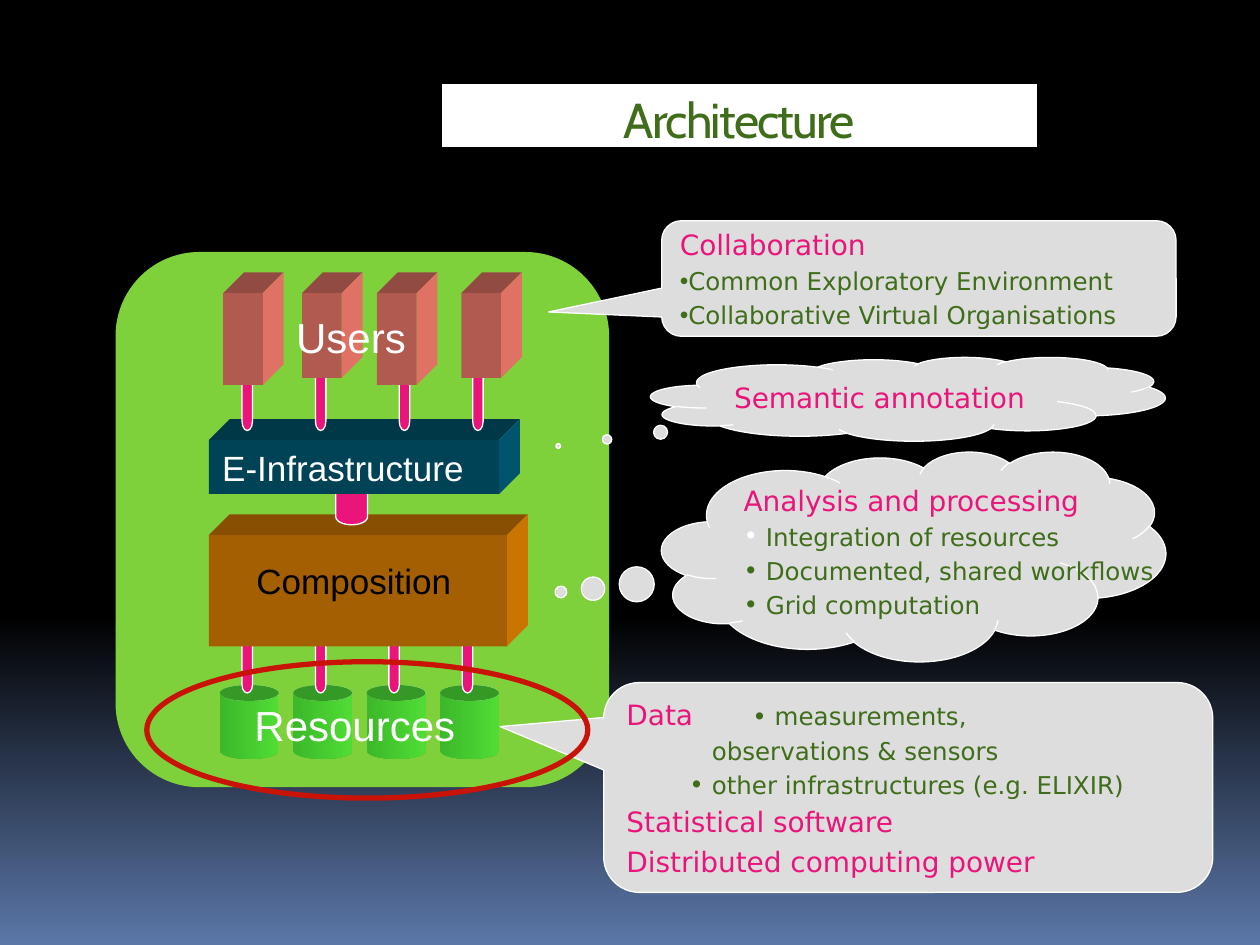
import pptx
import pptx.util
import pptx.dml.color
import pptx.enum.shapes
import pptx.enum.text
import pptx.oxml.ns
from lxml import etree

Cm = pptx.util.Cm
Pt = pptx.util.Pt
KIND = pptx.enum.shapes.MSO_SHAPE
ANCHOR = pptx.enum.text.MSO_ANCHOR
ALIGN = pptx.enum.text.PP_ALIGN
SANS = "DejaVu Sans"
INK = {
    "black": "000000", "white": "FFFFFF", "dusk": "5B77A8",
    "panel": "7FD13B", "pink": "EA157A", "grey": "DDDDDD",
    "text": "3F6D19", "ring": "CA1307",
    "lid": "359A25", "leaf": "3CB82A", "lime": "50DC35",
}
USER = ("B15B50", "924B42", "DF7265")
INFRA = ("004357", "003848", "00546D")
COMP = ("A45F02", "884F02", "CA7502")


def rgb(name):
    """Return the colour for a palette name or a hex string."""
    return pptx.dml.color.RGBColor.from_string(INK.get(name, name))


def paint(shape, fill, line=None, width=0.75):
    """Set the fill and outline of a shape."""
    shape.shadow.inherit = False
    if fill:
        shape.fill.solid()
        shape.fill.fore_color.rgb = rgb(fill)
    else:
        shape.fill.background()
    if line:
        shape.line.color.rgb = rgb(line)
        shape.line.width = Pt(width)
    else:
        shape.line.fill.background()


def draw(slide, kind, box, fill, line=None, width=0.75, adj=()):
    """Add a preset shape at a box given in centimetres."""
    shape = slide.shapes.add_shape(kind, *map(Cm, box))
    for i, value in enumerate(adj):
        shape.adjustments[i] = value
    paint(shape, fill, line, width)
    return shape


def style(run, size, face, color):
    """Set the size, face and colour of a run."""
    run.font.size = Pt(size)
    run.font.name = face
    run.font.color.rgb = rgb(color)


def label(slide, box, text, size, color):
    """Add a single line of text."""
    frame = slide.shapes.add_textbox(*map(Cm, box)).text_frame
    frame.word_wrap = False
    frame.text = text
    style(frame.paragraphs[0].runs[0], size, "Arial", color)


def face(slide, points, fill):
    """Add one flat face of a block."""
    pts = [(Cm(x), Cm(y)) for x, y in points]
    form = slide.shapes.build_freeform(*pts[0], scale=1.0)
    form.add_line_segments(pts[1:], close=True)
    paint(form.convert_to_shape(), fill)


def block(slide, box, tones, deep=0.42):
    """Add a solid block whose box is its front face."""
    x, y, w, h = box
    r, b = x + w, y + h
    front, top, side = tones
    face(slide, [(x, y), (x + deep, y - deep), (r + deep, y - deep), (r, y)], top)
    face(slide, [(r, y), (r + deep, y - deep), (r + deep, b - deep), (r, b)], side)
    draw(slide, KIND.RECTANGLE, box, front)


def pin(slide, x, y, h, w=0.21, adj=1.5):
    """Add a pink connecting rod."""
    draw(slide, KIND.CAN, (x, y, w, h), "pink", "white", adj=[adj])


def drum(slide, x, y, w=1.19, h=1.49, lid=0.32):
    """Add a shaded cylinder with a dark lid."""
    can = draw(slide, KIND.CAN, (x, y, w, h), "leaf", adj=[lid / w])
    can.fill.gradient()
    can.fill.gradient_angle = 0
    for stop, tone in zip(can.fill.gradient_stops, ("leaf", "lime")):
        stop.color.rgb = rgb(tone)
    draw(slide, KIND.OVAL, (x, y, w, lid), "lid")


def bullet(para, gap, font, color, left=0):
    """Give a paragraph a round bullet with a hanging indent."""
    props = para._p.get_or_add_pPr()
    props.set("marL", str(Cm(left + gap)))
    props.set("indent", str(-Cm(gap)))
    qn = pptx.oxml.ns.qn
    tint = etree.SubElement(props, qn("a:buClr"))
    etree.SubElement(tint, qn("a:srgbClr")).set("val", INK[color])
    etree.SubElement(props, qn("a:buFont")).set("typeface", font)
    etree.SubElement(props, qn("a:buChar")).set("char", "•")


def note(slide, kind, box, adj, lines):
    """Add a grey callout and return its paragraphs."""
    shape = draw(slide, kind, box, "grey", "white", adj=adj)
    frame = shape.text_frame
    frame.word_wrap = False
    frame.vertical_anchor = ANCHOR.MIDDLE
    frame.text = "\n".join(text for text, size in lines)
    for i, (para, (text, size)) in enumerate(zip(frame.paragraphs, lines)):
        para.alignment = ALIGN.LEFT
        if i:
            para.space_before = Pt(round(size * 0.2, 1))
        style(para.runs[0], size, SANS, "pink" if size == 16 else "text")
    return frame.paragraphs


def notes(slide):
    """Add the four callouts."""
    wedge, cloud = KIND.ROUNDED_RECTANGULAR_CALLOUT, KIND.CLOUD_CALLOUT
    paras = note(slide, wedge, (13.34, 4.45, 10.37, 2.33), (-0.72, 0.29, 0.17), [
        ("Collaboration", 16),
        ("Common Exploratory Environment", 14),
        ("Collaborative Virtual Organisations", 14)])
    for para in paras[1:]:
        bullet(para, 0.17, "Arial", "text")

    paras = note(slide, wedge, (12.17, 13.76, 12.28, 4.23), (-0.67, -0.29, 0.17), [
        ("Data", 16),
        ("observations & sensors", 14),
        ("other infrastructures (e.g. ELIXIR)", 14),
        ("Statistical software", 16),
        ("Distributed computing power", 16)])
    qn = pptx.oxml.ns.qn
    tabs = etree.SubElement(paras[0]._p.get_or_add_pPr(), qn("a:tabLst"))
    tab = etree.SubElement(tabs, qn("a:tab"))
    tab.set("pos", str(Cm(2.54)))
    tab.set("algn", "l")
    run = paras[0].add_run()
    run.text = "\t• measurements,"
    style(run, 14, SANS, "text")
    paras[1]._p.get_or_add_pPr().set("marL", str(Cm(1.72)))
    bullet(paras[2], 0.45, SANS, "text", 1.27)

    paras = note(slide, cloud, (13.34, 9.1, 10.16, 4.23), (-0.7, 0.17), [
        ("Analysis and processing", 16),
        ("Integration of resources", 14),
        ("Documented, shared workflows", 14),
        ("Grid computation", 14)])
    for para, tone in zip(paras[1:], ("white", "text", "text")):
        bullet(para, 0.45, SANS, tone)

    note(slide, cloud, (13.12, 7.2, 10.37, 1.69), (-0.68, 0.56),
         [("Semantic annotation", 16)])


def stack(slide):
    """Add the layers from resources up to users."""
    draw(slide, KIND.ROUNDED_RECTANGLE, (2.33, 5.08, 9.95, 10.79), "panel", adj=[0.17])
    for i in range(4):
        drum(slide, 4.43 + 1.48 * i, 13.81)
    label(slide, (4.88, 13.97, 5, 1.27), "Resources", 24, "white")
    for i in range(4):
        pin(slide, 4.88 + 1.48 * i, 12.7, 1.27)
    block(slide, (4.21, 10.79, 6.01, 2.24), COMP)
    label(slide, (4.92, 11.15, 5, 1.09), "Composition", 20, "black")
    pin(slide, 6.77, 9.31, 1.27, 0.64, 0.5)
    block(slide, (4.21, 8.87, 5.85, 1.09), INFRA)
    label(slide, (4.23, 8.88, 5.82, 1.09), "E-Infrastructure", 20, "white")
    for x in (4.88, 6.36, 8.05, 9.53):
        pin(slide, x, 7.2, 1.48, adj=1.75)
    for x, h in ((4.5, 1.85), (6.09, 1.71), (7.6, 1.85), (9.3, 1.71)):
        block(slide, (x, 5.91, 0.8, h), USER)
    label(slide, (5.72, 6.15, 3, 1.27), "Users", 24, "white")


def title(slide):
    """Add the title bar."""
    bar = draw(slide, KIND.RECTANGLE, (8.9, 1.68, 12.01, 1.3), "white", "black")
    frame = bar.text_frame
    frame.vertical_anchor = ANCHOR.TOP
    frame.text = "Architecture"
    para = frame.paragraphs[0]
    para.alignment = ALIGN.CENTER
    style(para.runs[0], 28, "Cabin", "text")
    para.runs[0].font._element.set("spc", "-100")


def main():
    """Build the slide and save it."""
    deck = pptx.Presentation()
    deck.slide_width, deck.slide_height = Cm(25.4), Cm(19.05)
    slide = deck.slides.add_slide(deck.slide_layouts[6])
    fill = slide.background.fill
    fill.gradient()
    fill.gradient_angle = 270
    for stop, tone, spot in zip(fill.gradient_stops, ("black", "dusk"), (0.65, 1)):
        stop.color.rgb = rgb(tone)
        stop.position = spot
    title(slide)
    stack(slide)
    notes(slide)
    draw(slide, KIND.OVAL, (2.96, 13.34, 8.89, 2.75), None, "ring", 3)
    deck.save("out.pptx")


if __name__ == "__main__":
    main()
